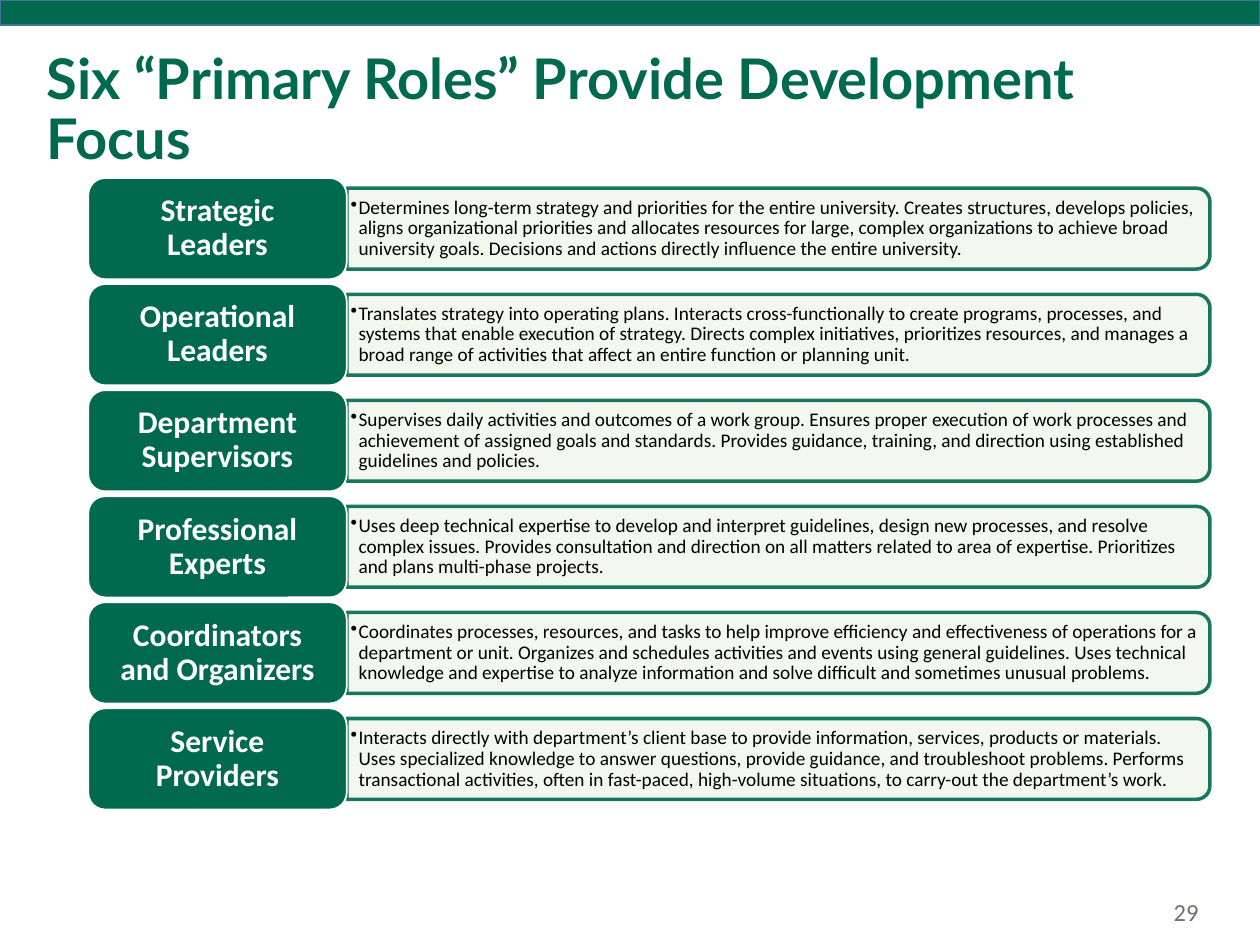
import dataclasses

import pptx
import pptx.dml.color
import pptx.enum.shapes
import pptx.enum.text
import pptx.oxml
import pptx.oxml.ns
import pptx.util

Cm = pptx.util.Cm
Pt = pptx.util.Pt
Shape = pptx.enum.shapes.MSO_SHAPE
Align = pptx.enum.text.PP_ALIGN


@dataclasses.dataclass(frozen=True)
class Theme:
    green: str = "00694E"
    pale: str = "F3F8EE"
    blue: str = "43739E"
    white: str = "FFFFFF"
    black: str = "000000"
    gray: str = "776F67"
    heading: str = "Lato"
    body: str = "Calibri"
    title_size: int = 32
    role_size: int = 18
    number_size: int = 14
    detail_size: int = 11


THEME = Theme()

ROLES = [
    ("Strategic Leaders",
     "Determines long-term strategy and priorities for the entire university. Creates structures, "
     "develops policies, aligns organizational priorities and allocates resources for large, complex "
     "organizations to achieve broad university goals. Decisions and actions directly influence the "
     "entire university."),
    ("Operational Leaders",
     "Translates strategy into operating plans. Interacts cross-functionally to create programs, "
     "processes, and systems that enable execution of strategy. Directs complex initiatives, "
     "prioritizes resources, and manages a broad range of activities that affect an entire function "
     "or planning unit."),
    ("Department Supervisors",
     "Supervises daily activities and outcomes of a work group. Ensures proper execution of work "
     "processes and achievement of assigned goals and standards. Provides guidance, training, and "
     "direction using established guidelines and policies."),
    ("Professional Experts",
     "Uses deep technical expertise to develop and interpret guidelines, design new processes, and "
     "resolve complex issues. Provides consultation and direction on all matters related to area of "
     "expertise. Prioritizes and plans multi-phase projects."),
    ("Coordinators and Organizers",
     "Coordinates processes, resources, and tasks to help improve efficiency and effectiveness of "
     "operations for a department or unit. Organizes and schedules activities and events using "
     "general guidelines. Uses technical knowledge and expertise to analyze information and solve "
     "difficult and sometimes unusual problems."),
    ("Service\vProviders",
     "Interacts directly with department’s client base to provide information, services, products or "
     "materials. Uses specialized knowledge to answer questions, provide guidance, and troubleshoot "
     "problems. Performs transactional activities, often in fast-paced, high-volume situations, to "
     "carry-out the department’s work."),
]


def apply(target, values):
    for name, value in values.items():
        setattr(target, name, value)


def rgb(code):
    return pptx.dml.color.RGBColor.from_string(code)


def add_panel(page, kind, box, fill, line, weight):
    panel = page.shapes.add_shape(kind, *map(Cm, box))
    panel.shadow.inherit = False
    panel.fill.solid()
    panel.fill.fore_color.rgb = rgb(fill)
    panel.line.color.rgb = rgb(line)
    panel.line.width = Pt(weight)
    return panel


def add_text_box(page, box):
    return page.shapes.add_textbox(*map(Cm, box))


def write(holder, text, size, color, font=THEME.body, bold=False,
          align=Align.LEFT, spacing=0.9, inset=(0.25, 0.13), bullet_indent=None):
    across, down = map(Cm, inset)
    frame = holder.text_frame
    apply(frame, {"word_wrap": True, "vertical_anchor": pptx.enum.text.MSO_ANCHOR.MIDDLE,
                  "margin_left": across, "margin_right": across,
                  "margin_top": down, "margin_bottom": down})
    para = frame.paragraphs[0]
    para.text = text
    apply(para, {"alignment": align, "line_spacing": spacing})
    if bullet_indent:
        properties = para._p.get_or_add_pPr()
        properties.set("marL", str(Cm(bullet_indent)))
        properties.set("indent", str(-Cm(bullet_indent)))
        bullet = pptx.oxml.parse_xml(f'<a:buChar {pptx.oxml.ns.nsdecls("a")} char="•"/>')
        properties.append(bullet)
    for span in para.runs:
        apply(span.font, {"name": font, "size": Pt(size), "bold": bold})
        span.font.color.rgb = rgb(color)


def add_header(page, box):
    left, top, width, height = box
    add_panel(page, Shape.RECTANGLE, (left, top, width, 0.51), THEME.green, THEME.blue, 1)
    title = add_text_box(page, (left + 0.69, top + 0.41, 24.08, height - 0.41))
    write(title, "Six “Primary Roles” Provide Development Focus",
          THEME.title_size, THEME.green, font=THEME.heading, bold=True)


def add_role(page, box, role, detail):
    left, top, width, height = box
    role_width = 5.21
    detail_left = left + role_width
    detail_width = width - role_width
    detail_height = 1.63
    middle = top + height / 2

    upright = (detail_left + (detail_width - detail_height) / 2, middle - detail_width / 2,
               detail_height, detail_width)
    panel = add_panel(page, Shape.ROUND_2_SAME_RECTANGLE, upright, THEME.pale, THEME.green, 2)
    panel.rotation = 90
    line_color = panel.line._ln.find(".//" + pptx.oxml.ns.qn("a:srgbClr"))
    line_color.append(pptx.oxml.parse_xml(
        f'<a:alpha {pptx.oxml.ns.nsdecls("a")} val="90000"/>'))

    note = add_text_box(page, (detail_left, middle - 0.74, detail_width - 0.08, 1.48))
    write(note, detail, THEME.detail_size, THEME.black, inset=(0.08, 0.08), bullet_indent=0.16)

    tile = add_panel(page, Shape.ROUNDED_RECTANGLE, (left, top, role_width, height),
                     THEME.green, THEME.white, 1)
    write(tile, role, THEME.role_size, THEME.white, bold=True,
          align=Align.CENTER, inset=(0.28, 0.2))


def add_roles(page, box):
    left, top, width, height = box
    tile_height = 2.04
    pitch = (height - tile_height) / (len(ROLES) - 1)
    for index, (role, detail) in enumerate(ROLES):
        add_role(page, (left, top + index * pitch, width, tile_height), role, detail)


def add_page_number(page, box):
    write(add_text_box(page, box), "29", THEME.number_size, THEME.gray,
          align=Align.RIGHT, spacing=1)


def main():
    deck = pptx.Presentation()
    apply(deck, {"slide_width": Cm(25.4), "slide_height": Cm(19.05)})
    page = deck.slides.add_slide(deck.slide_layouts[6])
    add_page_number(page, (16.79, 17.86, 7.62, 1.02))
    add_header(page, (0, 0, 25.4, 4.09))
    add_roles(page, (1.78, 3.59, 22.61, 12.73))
    deck.save("out.pptx")


if __name__ == "__main__":
    main()
